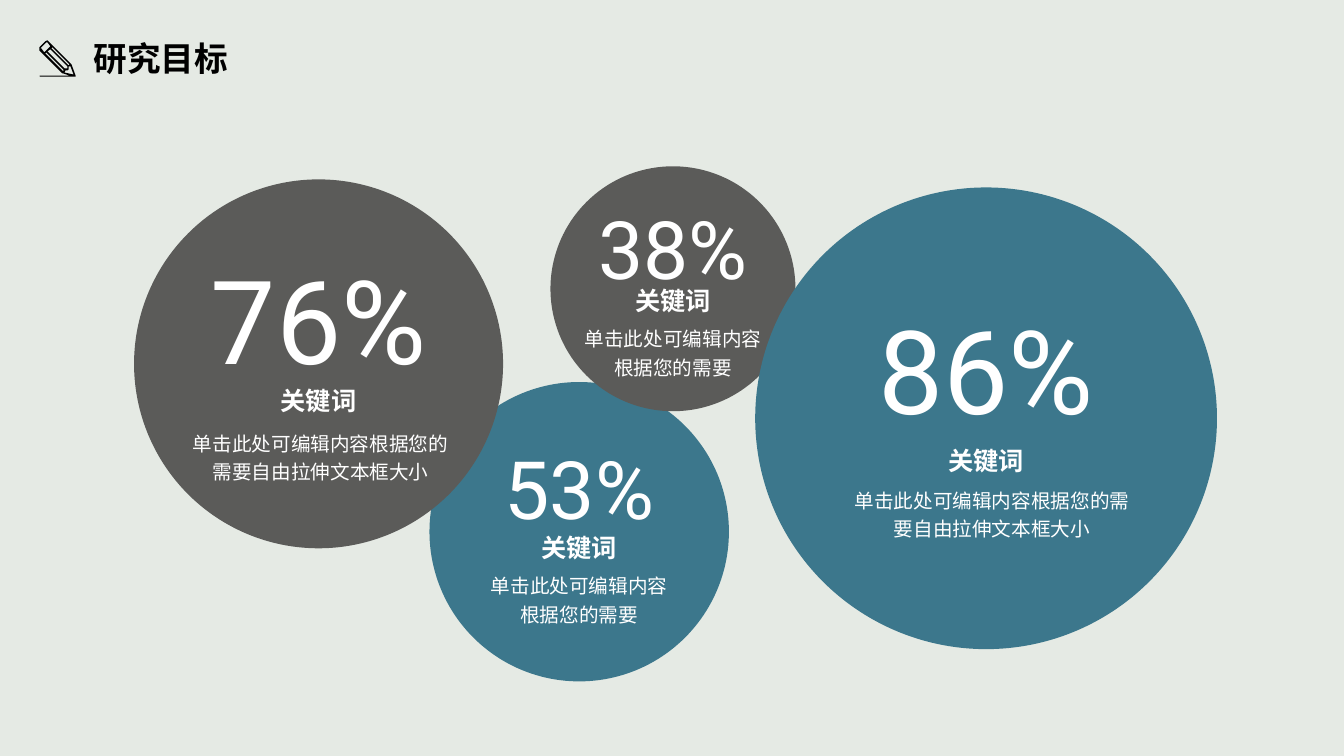
from dataclasses import dataclass

from lxml.etree import SubElement
from pptx import Presentation
from pptx.dml.color import RGBColor
from pptx.enum.shapes import MSO_SHAPE
from pptx.enum.text import MSO_ANCHOR, PP_ALIGN
from pptx.oxml.ns import qn
from pptx.util import Inches, Pt

COLOURS = {
    "background": "E5EAE4",
    "teal": "3C778C",
    "grey": "5B5B59",
    "white": "FFFFFF",
    "black": "000000",
}
CHINESE_FONT = "Noto Sans CJK SC"
SHORT_CAPTION = "单击此处可编辑内容根据您的需要"
LONG_CAPTION = "单击此处可编辑内容根据您的需要自由拉伸文本框大小"


@dataclass
class Bubble:
    """A circle with its text; the three tops are measured from the circle's top."""
    left: float
    top: float
    diameter: float
    colour: str
    number: str
    number_size: float
    number_top: float
    keyword_top: float
    caption: str
    caption_top: float
    caption_width: float
    caption_shift: float = 0


BUBBLES = [
    Bubble(4.26, 3.79, 2.97, "teal", "53%", 57.5, 0.57, 1.43, SHORT_CAPTION, 1.86, 1.88),
    Bubble(1.33, 1.78, 3.66, "grey", "76%", 83, 0.68, 1.98, LONG_CAPTION, 2.46, 2.59, 0.02),
    Bubble(5.46, 1.65, 2.43, "grey", "38%", 57.5, 0.32, 1.12, SHORT_CAPTION, 1.55, 1.88),
    Bubble(7.49, 1.86, 4.58, "teal", "86%", 83, 1.1, 2.5, LONG_CAPTION, 2.94, 2.8, 0.06),
]

# Pencil contours in hundredths of an inch, from the icon's top left corner
PENCIL = [
    [(36, 36), (36, 35), (32, 24), (13, 5), (9, 1), (8, 0), (6, 1), (0, 7), (0, 10),
     (4, 14), (23, 33), (24, 33), (30, 35), (1, 35), (0, 35.5), (1, 36)],
    [(34, 34), (25, 32), (26, 30), (28, 30), (29, 29), (29, 26), (31, 26)],
    [(13, 7), (30, 24), (29, 25), (12, 8)],
    [(11, 9), (28, 26), (28, 28), (25, 28), (8, 11)],
    [(1, 8), (7, 2), (8, 2), (11, 6), (5, 12), (2, 8)],
    [(7, 12), (24, 29), (24, 31), (6, 13)],
]


def colour(name):
    return RGBColor.from_string(COLOURS[name])


def style_font(para, size, font_name, colour_name, bold=False):
    font = para.font
    font.size, font.bold, font.name = Pt(size), bold, font_name
    font.color.rgb = colour(colour_name)
    properties = para._p.get_or_add_pPr().find(qn("a:defRPr"))
    SubElement(properties, qn("a:ea")).set("typeface", CHINESE_FONT)


def add_centred_text(page, centre, top, width, height, text, size, font_name,
                     bold=False, wrap=True, line_spacing=1.0):
    box = page.shapes.add_textbox(
        Inches(centre - width / 2), Inches(top), Inches(width), Inches(height))
    frame = box.text_frame
    frame.word_wrap = wrap
    frame.margin_left = frame.margin_right = frame.margin_top = frame.margin_bottom = 0
    para = frame.paragraphs[0]
    para.text = text
    para.alignment = PP_ALIGN.CENTER
    para.line_spacing = line_spacing
    style_font(para, size, font_name, "white", bold)


def add_bubble(page, bubble):
    diameter = Inches(bubble.diameter)
    circle = page.shapes.add_shape(
        MSO_SHAPE.OVAL, Inches(bubble.left), Inches(bubble.top), diameter, diameter)
    circle.shadow.inherit = False
    circle.fill.solid()
    circle.fill.fore_color.rgb = colour(bubble.colour)
    circle.line.fill.background()

    centre = bubble.left + bubble.diameter / 2
    add_centred_text(page, centre, bubble.top + bubble.number_top,
                     bubble.number_size * 0.026, bubble.number_size * 0.017,
                     bubble.number, bubble.number_size, "Roboto", wrap=False)
    add_centred_text(page, centre, bubble.top + bubble.keyword_top, 1.5, 0.33,
                     "关键词", 18, "Arial", bold=True, line_spacing=1.2)
    add_centred_text(page, centre + bubble.caption_shift, bubble.top + bubble.caption_top,
                     bubble.caption_width, 0.55, bubble.caption, 14, CHINESE_FONT,
                     line_spacing=1.2)


def add_pencil(page, left, top):
    # Tenths of a hundredth keep half steps exact
    unit = 10
    outline, *openings = [[(x * unit, y * unit) for x, y in contour] for contour in PENCIL]
    builder = page.shapes.build_freeform(*outline[0], scale=Inches(0.01) / unit)
    builder.add_line_segments(outline[1:], close=True)
    for opening in openings:
        builder.move_to(*opening[0])
        builder.add_line_segments(opening[1:], close=True)
    pencil = builder.convert_to_shape(Inches(left), Inches(top))
    pencil.shadow.inherit = False
    pencil.fill.solid()
    pencil.fill.fore_color.rgb = colour("black")
    pencil.line.fill.background()


def add_heading(page, left, top, text):
    title = page.shapes.title
    title.left, title.top = Inches(left + 0.44), Inches(top - 0.07)
    title.width, title.height = Inches(2.56), Inches(0.5)
    title.text_frame.vertical_anchor = MSO_ANCHOR.TOP
    para = title.text_frame.paragraphs[0]
    para.text = text
    para.alignment = PP_ALIGN.LEFT
    style_font(para, 24, CHINESE_FONT, "black", bold=True)
    add_pencil(page, left, top)


def main():
    deck = Presentation()
    deck.slide_width, deck.slide_height = Inches(13.33), Inches(7.5)
    page = deck.slides.add_slide(deck.slide_layouts[5])
    page.background.fill.solid()
    page.background.fill.fore_color.rgb = colour("background")
    add_heading(page, 0.39, 0.4, "研究目标")
    for bubble in BUBBLES:
        add_bubble(page, bubble)
    deck.save("out.pptx")


if __name__ == "__main__":
    main()
